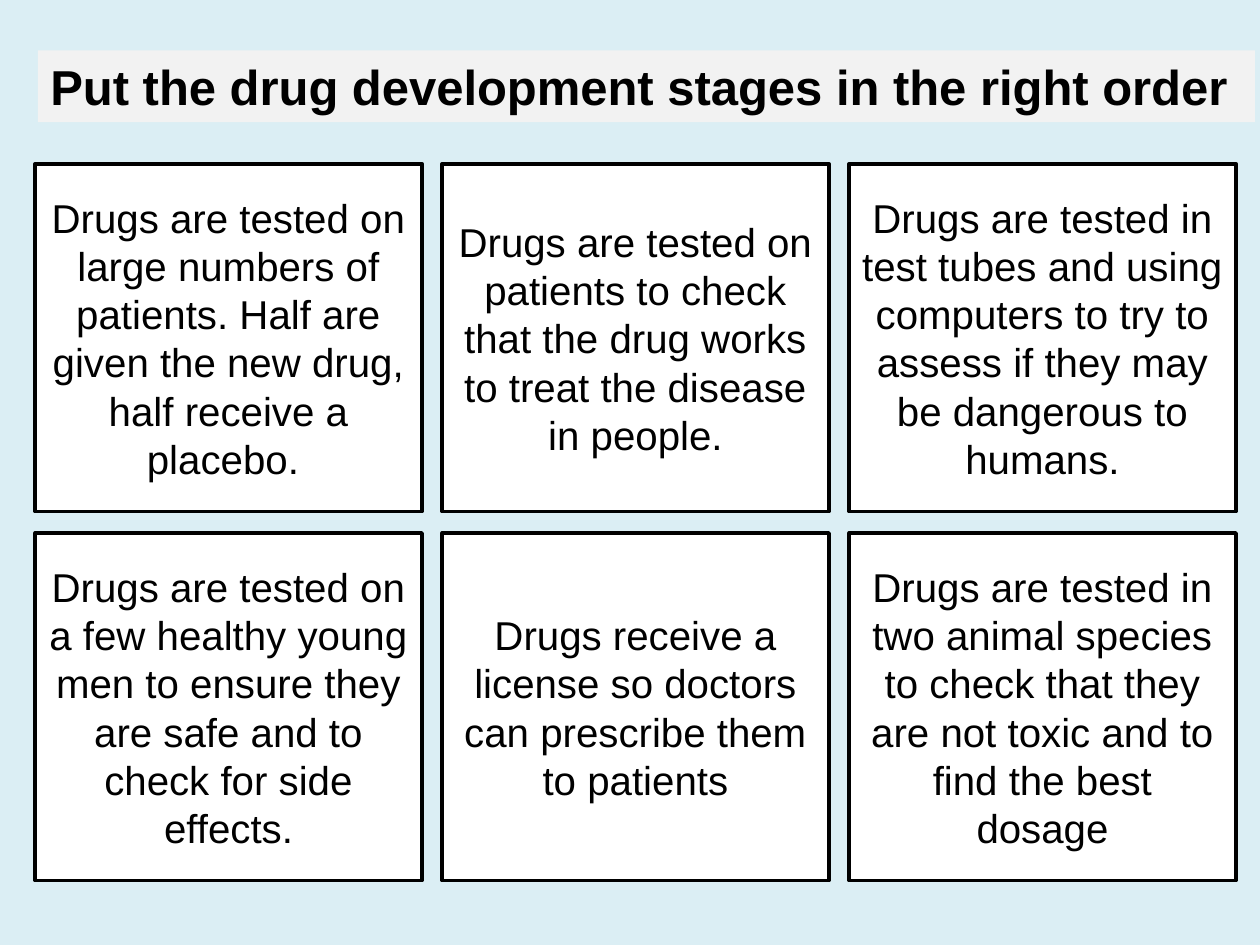
from pptx import Presentation
from pptx.dml.color import RGBColor
from pptx.enum import shapes, text
from pptx.util import Inches, Pt

theme = {
    "background": RGBColor.from_string("DBEEF4"),
    "banner": RGBColor.from_string("F2F2F2"),
    "card": RGBColor.from_string("FFFFFF"),
    "ink": RGBColor.from_string("000000"),
    "title_font": {"name": "Arial", "size": Pt(28), "bold": True},
    "card_font": {"name": "Arial", "size": Pt(23), "bold": False},
    "border": Pt(2),
}

stages = [
    [
        "Drugs are tested on large numbers of patients. Half are given the new drug, half receive a placebo. ",
        "Drugs are tested on patients to check that the drug works to treat the disease in people.",
        "Drugs are tested in test tubes and using computers to try to assess if they may be dangerous to humans.",
    ],
    [
        "Drugs are tested on a few healthy young men to ensure they are safe and to check for side effects.",
        "Drugs receive a license so doctors can prescribe them to patients",
        "Drugs are tested in two animal species to check that they are not toxic and to find the best dosage",
    ],
]


def write(shape, words, font, alignment, anchor):
    frame = shape.text_frame
    frame.text = words
    frame_format = {
        "word_wrap": True,
        "auto_size": text.MSO_AUTO_SIZE.NONE,
        "vertical_anchor": anchor,
    }
    for name, value in frame_format.items():
        setattr(frame, name, value)
    paragraph = frame.paragraphs[0]
    paragraph.alignment = alignment
    run = paragraph.runs[0]
    for name, value in font.items():
        setattr(run.font, name, value)
    run.font.color.rgb = theme["ink"]


presentation = Presentation()
presentation.slide_width = Inches(10)
presentation.slide_height = Inches(7.5)
slide = presentation.slides.add_slide(presentation.slide_layouts[5])
slide.background.fill.solid()
slide.background.fill.fore_color.rgb = theme["background"]

title = slide.shapes.title
title_box = {"left": 0.3, "top": 0.4, "width": 9.66, "height": 0.57}
for name, value in title_box.items():
    setattr(title, name, Inches(value))
title.fill.solid()
title.fill.fore_color.rgb = theme["banner"]
write(title, "Put the drug development stages in the right order", theme["title_font"],
      text.PP_ALIGN.LEFT, text.MSO_ANCHOR.TOP)

left, top = 0.28, 1.3
width, height = 3.07, 2.76
column_step, row_step = 3.23, 2.93

for row, row_stages in enumerate(stages):
    for column, stage in enumerate(row_stages):
        card = slide.shapes.add_shape(
            shapes.MSO_SHAPE.RECTANGLE,
            Inches(left + column * column_step), Inches(top + row * row_step),
            Inches(width), Inches(height))
        card.shadow.inherit = False
        card.fill.solid()
        card.fill.fore_color.rgb = theme["card"]
        card.line.color.rgb = theme["ink"]
        card.line.width = theme["border"]
        write(card, stage, theme["card_font"], text.PP_ALIGN.CENTER, text.MSO_ANCHOR.MIDDLE)

presentation.save("out.pptx")
